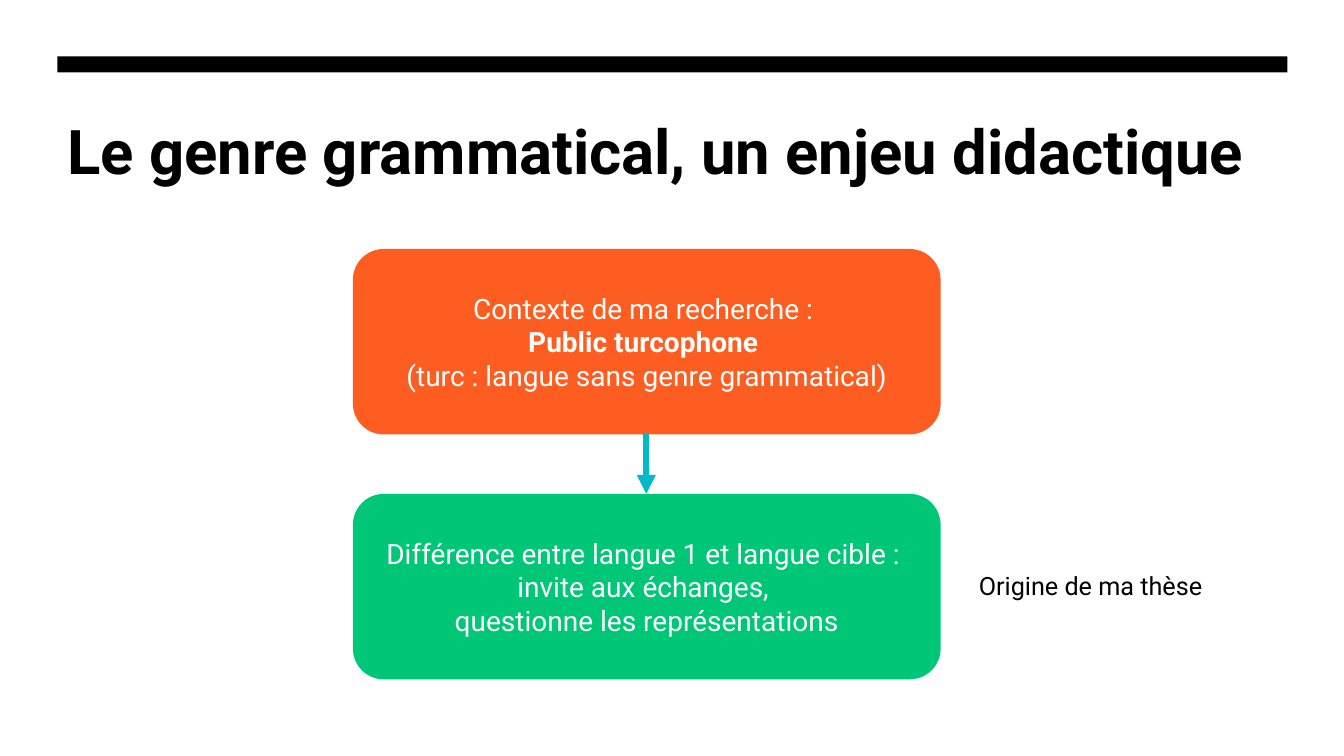
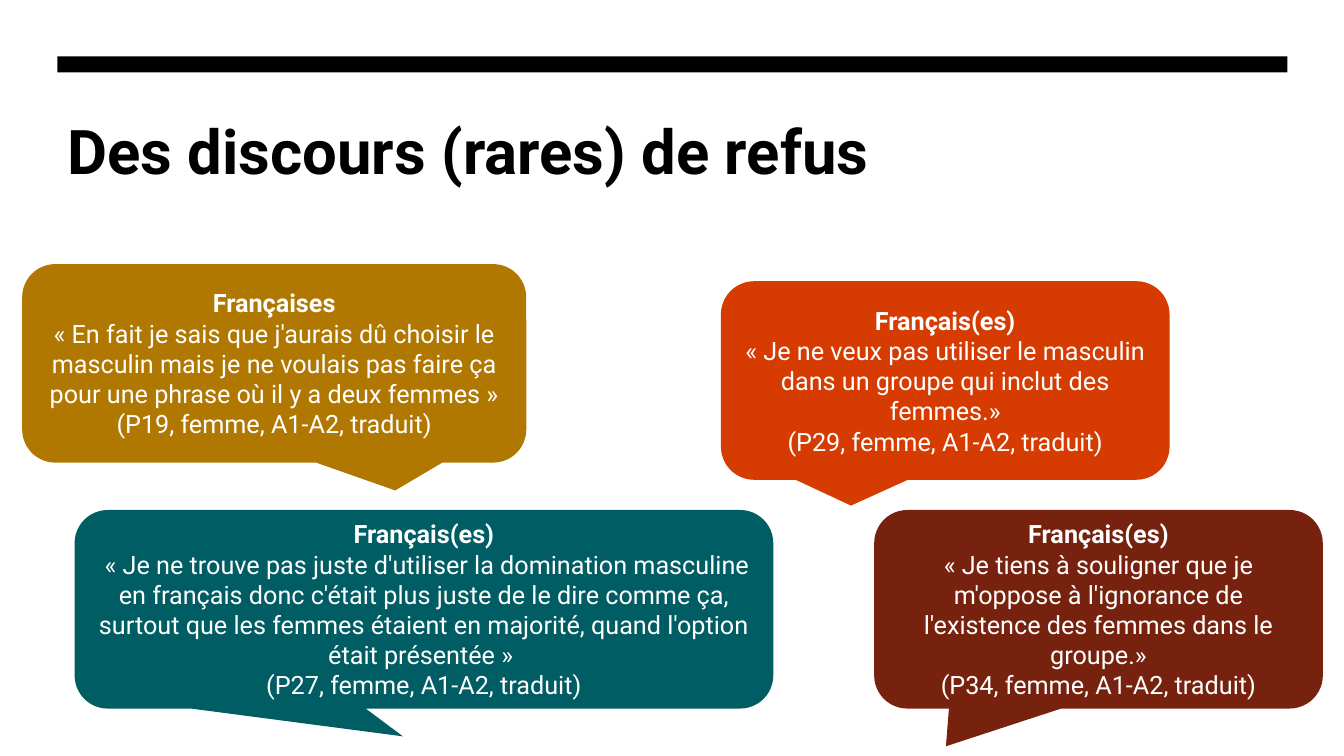
from pptx import Presentation
from pptx.dml.color import RGBColor
from pptx.enum.shapes import MSO_CONNECTOR as Connector, MSO_SHAPE as Shape
from pptx.enum.text import MSO_ANCHOR as Anchor, MSO_AUTO_SIZE as AutoSize, PP_ALIGN as Align
from pptx.oxml import parse_xml
from pptx.oxml.ns import nsdecls
from pptx.util import Pt

PX = 9144  # 100 px to the inch
SLIDE_WIDTH, SLIDE_HEIGHT = 1333, 750
MARGIN, CONTENT_WIDTH = 57, 1220
FONT = "Roboto"

BLACK = RGBColor(0x00, 0x00, 0x00)
WHITE = RGBColor(0xFF, 0xFF, 0xFF)
ORANGE = RGBColor(0xFE, 0x5D, 0x21)
GREEN = RGBColor(0x00, 0xC7, 0x77)
CYAN = RGBColor(0x00, 0xBA, 0xC8)
OCHRE = RGBColor(0xB0, 0x78, 0x00)
TEAL = RGBColor(0x00, 0x5D, 0x64)
RED = RGBColor(0xD6, 0x3B, 0x01)
BROWN = RGBColor(0x77, 0x22, 0x0E)

# Box (left, top, width, height), colour, pointer tip, heading, quotation, speaker
QUOTES = [
    ((22, 262, 500, 197), OCHRE, (0.24, 0.64), "Françaises",
     "« En fait je sais que j'aurais dû choisir le masculin mais je ne voulais pas "
     "faire ça pour une phrase où il y a deux femmes »",
     "(P19, femme, A1-A2, traduit)"),
    ((74, 506, 693, 197), TEAL, (-0.03, 0.64), "Français(es)",
     " « Je ne trouve pas juste d'utiliser la domination masculine en français donc "
     "c'était plus juste de le dire comme ça, surtout que les femmes étaient en "
     "majorité, quand l'option était présentée » ",
     "(P27, femme, A1-A2, traduit)"),
    ((715, 279, 445, 197), RED, (-0.21, 0.63), "Français(es)",
     "« Je ne veux pas utiliser le masculin dans un groupe qui inclut des femmes.»",
     "(P29, femme, A1-A2, traduit)"),
    ((867, 506, 445, 197), BROWN, (-0.34, 0.69), "Français(es)",
     "« Je tiens à souligner que je m'oppose à l'ignorance de l'existence des femmes "
     "dans le groupe.»",
     "(P34, femme, A1-A2, traduit)"),
]


def to_emu(*lengths):
    return [length * PX for length in lengths]


def write_text(text_frame, lines, size, color=BLACK, align=Align.LEFT,
               anchor=Anchor.TOP, bold_line=None, wrap=True):
    """Write one paragraph per line; bold_line is the index of the bold one."""
    text_frame.word_wrap = wrap
    text_frame.vertical_anchor = anchor
    text_frame.text = "\n".join(lines)
    for index, paragraph in enumerate(text_frame.paragraphs):
        paragraph.alignment = align
        for run in paragraph.runs:
            run.font.name = FONT
            run.font.size = Pt(size)
            run.font.color.rgb = color
            run.font.bold = index == bold_line


def add_filled_shape(slide, kind, box, color):
    shape = slide.shapes.add_shape(kind, *to_emu(*box))
    shape.shadow.inherit = False
    shape.fill.solid()
    shape.fill.fore_color.rgb = color
    shape.line.fill.background()
    return shape


def add_label_shape(slide, kind, box, color, lines, size, bold_line=None):
    shape = add_filled_shape(slide, kind, box, color)
    write_text(shape.text_frame, lines, size, color=WHITE, align=Align.CENTER,
               anchor=Anchor.MIDDLE, bold_line=bold_line)
    return shape


def add_arrow(slide, start, end, color, width):
    arrow = slide.shapes.add_connector(Connector.STRAIGHT, *to_emu(*start, *end))
    arrow.line.color.rgb = color
    arrow.line.width = Pt(width)
    arrow.line._get_or_add_ln().append(
        parse_xml(f'<a:tailEnd {nsdecls("a")} type="triangle"/>'))
    arrow._element.spPr.append(parse_xml(f'<a:effectLst {nsdecls("a")}/>'))


def add_titled_slide(presentation, layout, title):
    slide = presentation.slides.add_slide(layout)
    text_frame = slide.shapes.title.text_frame
    text_frame.auto_size = AutoSize.NONE
    write_text(text_frame, [title], 44, bold_line=0)
    return slide


def style_layout(layout, slide):
    """Place the title on the layout and move a top bar there from the slide."""
    title = layout.placeholders[0]
    title.left, title.top, title.width, title.height = to_emu(MARGIN, 107, CONTENT_WIDTH, 160)
    bar = add_filled_shape(slide, Shape.RECTANGLE, (MARGIN, 56, CONTENT_WIDTH, 16), BLACK)
    layout.shapes._spTree.append(bar._element)


def add_context_flow(slide, left, top, width):
    box_height, gap = 184, 59
    second_top = top + box_height + gap
    add_label_shape(slide, Shape.ROUNDED_RECTANGLE, (left, top, width, box_height), ORANGE,
                    ["Contexte de ma recherche : ", "Public turcophone ",
                     "(turc : langue sans genre grammatical)"], 20, bold_line=1)
    add_label_shape(slide, Shape.ROUNDED_RECTANGLE, (left, second_top, width, box_height), GREEN,
                    ["Différence entre langue 1 et langue cible : ",
                     "invite aux échanges, ", "questionne les représentations"], 20)
    center = left + width // 2
    add_arrow(slide, (center, top + box_height), (center, second_top), CYAN, 4.5)
    note = slide.shapes.add_textbox(*to_emu(left + width + 28, second_top + 71, 257, 40))
    write_text(note.text_frame, ["Origine de ma thèse"], 18, wrap=False)


def add_quote(slide, box, color, tip, *lines):
    callout = add_label_shape(slide, Shape.ROUNDED_RECTANGULAR_CALLOUT, box, color,
                              lines, 18, bold_line=0)
    callout.adjustments[0], callout.adjustments[1] = tip


def main():
    presentation = Presentation()
    presentation.slide_width, presentation.slide_height = to_emu(SLIDE_WIDTH, SLIDE_HEIGHT)
    layout = presentation.slide_layouts[5]

    context_slide = add_titled_slide(presentation, layout,
                                     "Le genre grammatical, un enjeu didactique")
    style_layout(layout, context_slide)
    add_context_flow(context_slide, 350, 247, 583)

    refusal_slide = add_titled_slide(presentation, layout, "Des discours (rares) de refus")
    for quote in QUOTES:
        add_quote(refusal_slide, *quote)

    presentation.save("out.pptx")


if __name__ == "__main__":
    main()
